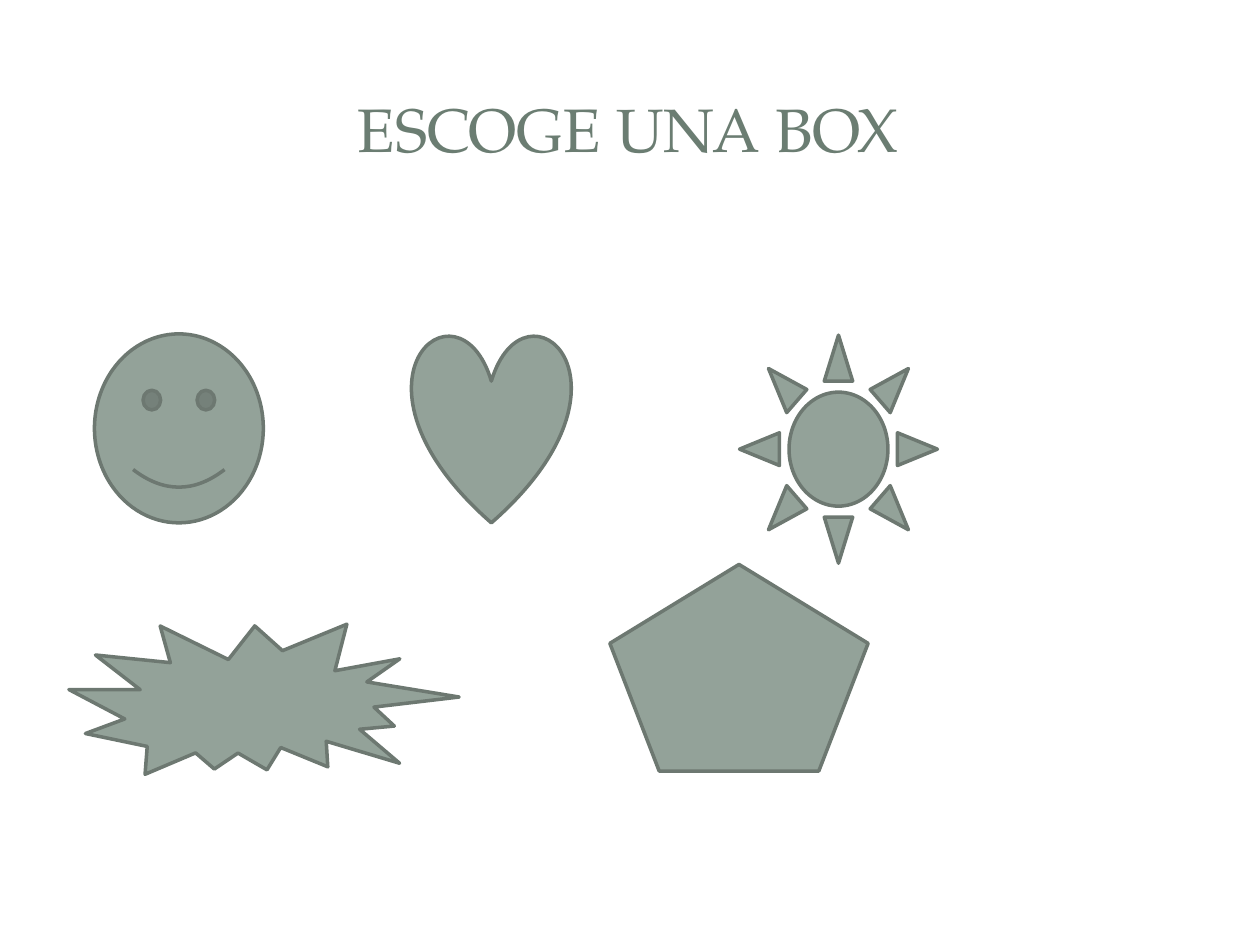
from pptx import Presentation
from pptx.dml.color import RGBColor
from pptx.enum.shapes import MSO_SHAPE as SHAPE
from pptx.enum.text import MSO_ANCHOR as ANCHOR, PP_ALIGN as ALIGN
from pptx.util import Inches, Pt

TITLE_GREEN = RGBColor(0x6B, 0x7D, 0x72)
SAGE = RGBColor(0x93, 0xA2, 0x99)
OUTLINE = RGBColor(0x6D, 0x78, 0x71)


class SlideBuilder:
    font_name = "TeX Gyre Pagella"
    line_width = Pt(2)

    def __init__(self, prs):
        self.s = prs.slides.add_slide(prs.slide_layouts[6])

    def title(self, text, left, top, width, height):
        box = self.s.shapes.add_textbox(*map(Inches, (left, top, width, height)))
        tf = box.text_frame
        tf.word_wrap = True
        tf.vertical_anchor = ANCHOR.MIDDLE
        p = tf.paragraphs[0]
        p.text = text
        p.alignment = ALIGN.CENTER
        p.font.name = self.font_name
        p.font.size = Pt(35)
        p.font.color.rgb = TITLE_GREEN

    def figure(self, kind, left, top, width, height, rotation=0):
        sp = self.s.shapes.add_shape(kind, *map(Inches, (left, top, width, height)))
        sp.rotation = rotation
        sp.shadow.inherit = False
        sp.fill.solid()
        sp.fill.fore_color.rgb = SAGE
        sp.line.color.rgb = OUTLINE
        sp.line.width = self.line_width


def main():
    prs = Presentation()
    prs.slide_width, prs.slide_height = Inches(10), Inches(7.5)

    slide = SlideBuilder(prs)
    slide.title("ESCOGE UNA BOX", 0.47, 0.45, 9.03, 1.14)
    slide.figure(SHAPE.SMILEY_FACE, 0.75, 2.65, 1.34, 1.5)
    slide.figure(SHAPE.HEART, 3.27, 2.65, 1.26, 1.5)
    slide.figure(SHAPE.SUN, 5.87, 2.66, 1.57, 1.81)
    slide.figure(SHAPE.EXPLOSION2, 0.55, 4.86, 3.07, 1.42, rotation=8.7)
    slide.figure(SHAPE.REGULAR_PENTAGON, 4.84, 4.48, 2.05, 1.64)

    prs.save("out.pptx")


if __name__ == "__main__":
    main()
